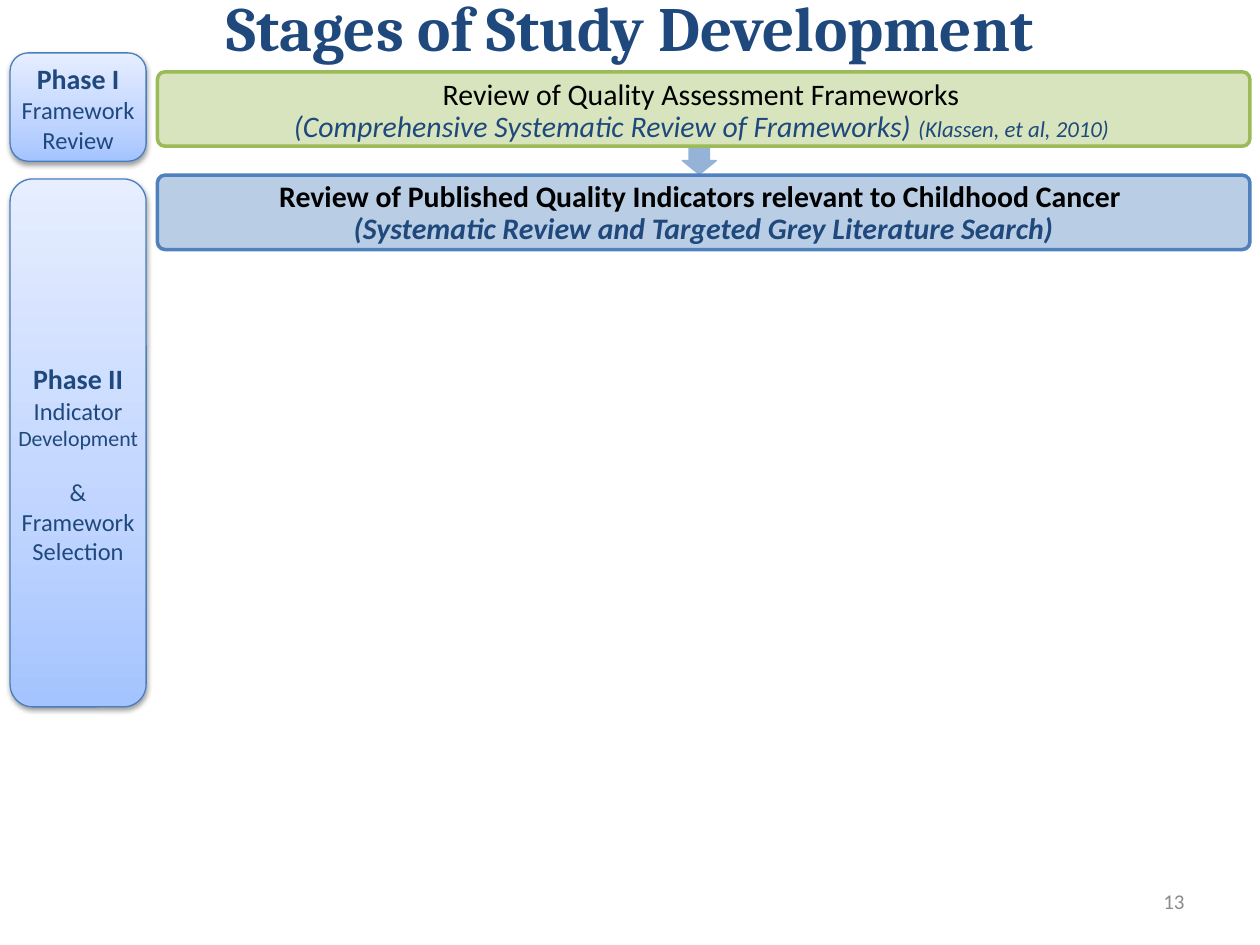
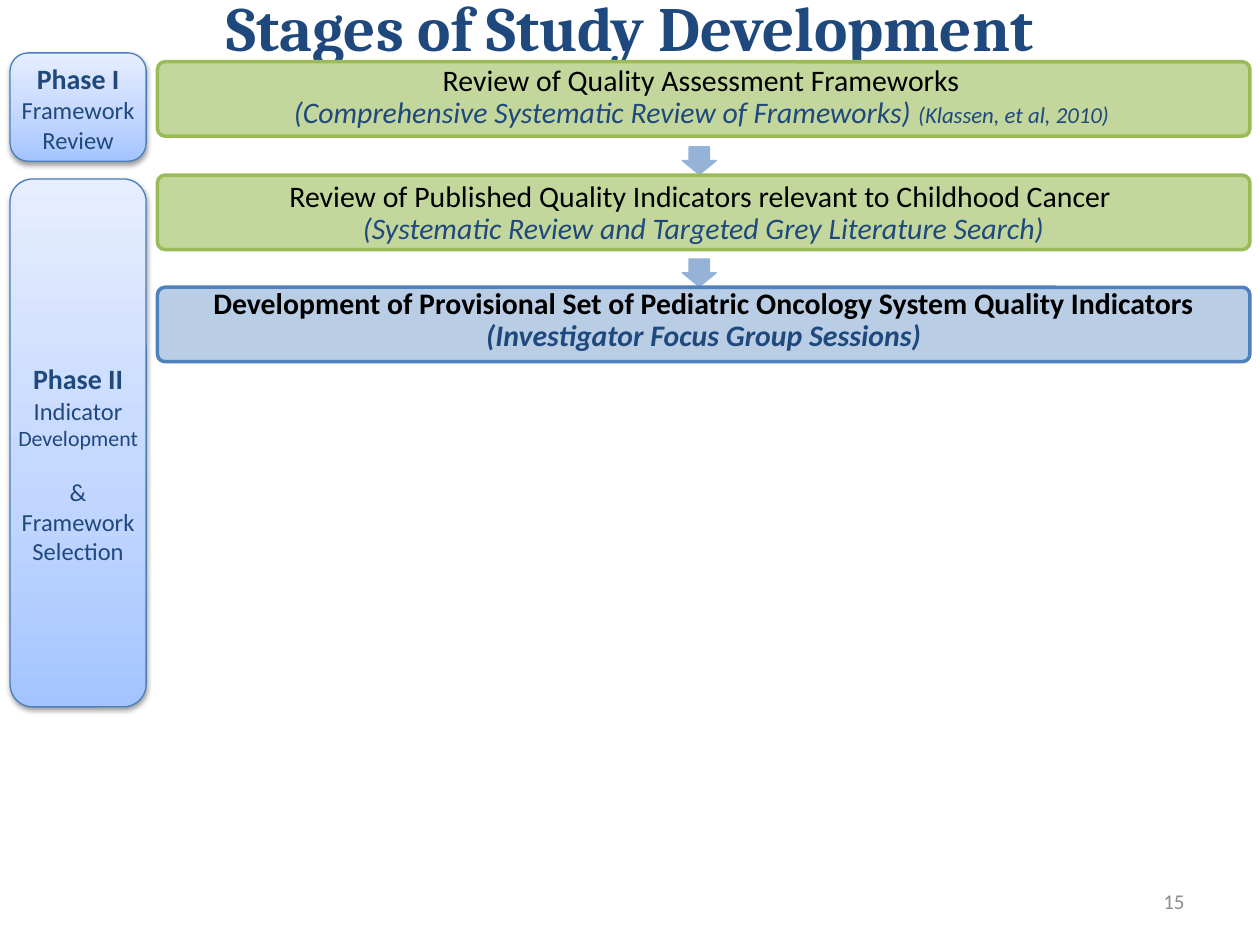
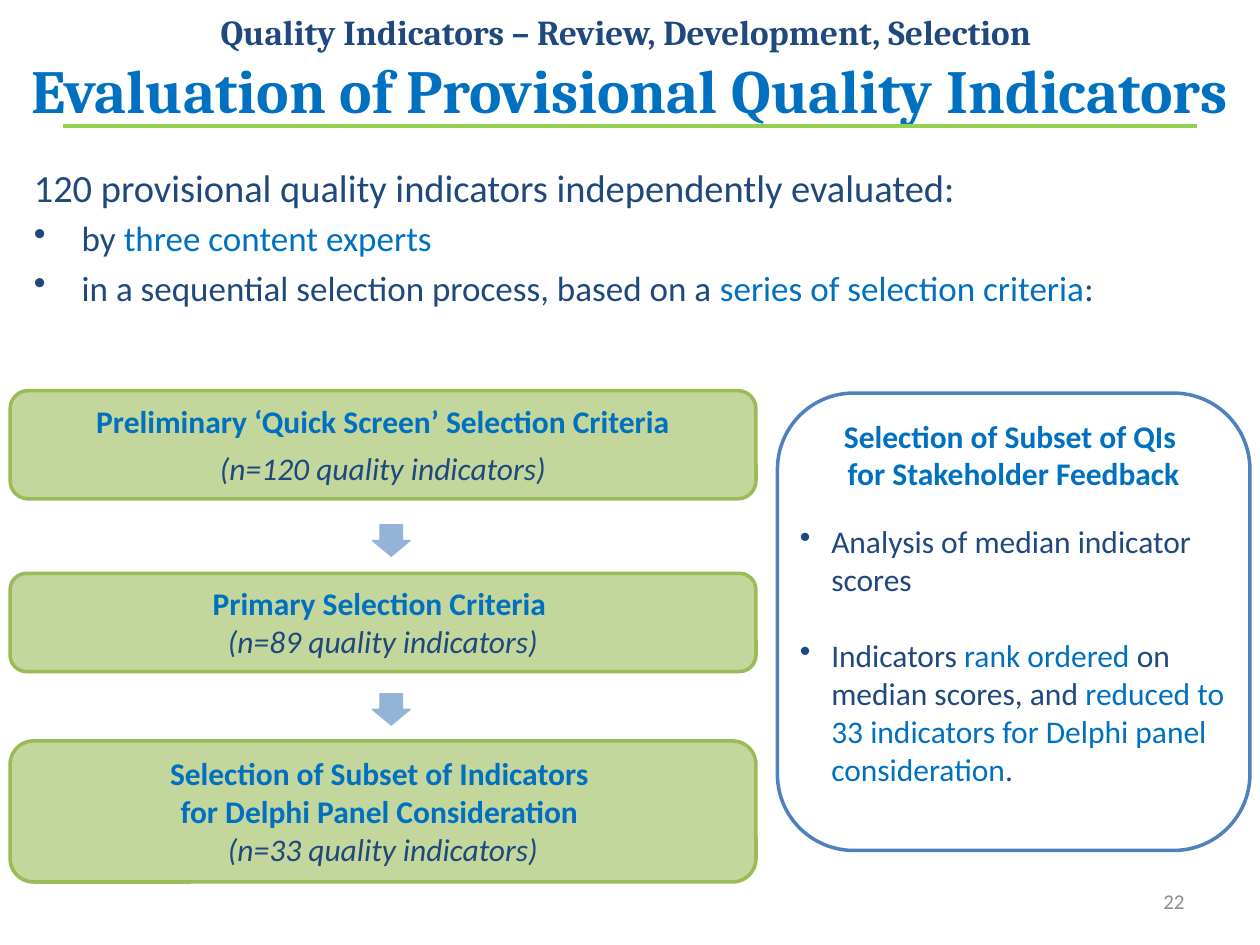
from copy import deepcopy

from pptx import Presentation, oxml
from pptx import util as u
from pptx.dml import color
from pptx.enum import shapes, text
from pptx.oxml import ns

NAVY, BLUE, BLACK, GREY = "1F497D", "0070C0", "000000", "8C8C8C"
GREEN, PALE_GREEN, GREEN_LINE = "C3D69B", "D7E4BD", "9BBB59"
PALE_BLUE, BLUE_LINE, ARROW, RULE = "B9CDE5", "4F81BD", "95B3D7", "92D050"
PHASE_LINE = "4B7EBC"
PHASE_STOPS = [(0, "A4C4FF"), (35, "BFD4FF"), (100, "E6EEFF")]

SHAPE = shapes.MSO_SHAPE
CENTER, LEFT, RIGHT = text.PP_ALIGN.CENTER, text.PP_ALIGN.LEFT, text.PP_ALIGN.RIGHT
TOP, MIDDLE = text.MSO_ANCHOR.TOP, text.MSO_ANCHOR.MIDDLE


def rgb(value):
    return color.RGBColor.from_string(value)


def run(words, size, ink=NAVY, name="Calibri", **fmt):
    return words, ink, {"size": u.Pt(size), "name": name, **fmt}


def para(*runs, bullet=0, align=CENTER, **fmt):
    return runs, bullet, {"alignment": align, **fmt}


class Deck:
    def __init__(self):
        self.prs = Presentation()
        self.prs.slide_width, self.prs.slide_height = u.Inches(10), u.Inches(7.5)
        self.s = None

    def slide(self):
        self.s = self.prs.slides.add_slide(self.prs.slide_layouts[6])

    # Text
    def fill_text(self, tf, paras, inset=(0.1, 0.05, 0.1, 0.05), anchor=TOP):
        sides = ("margin_left", "margin_top", "margin_right", "margin_bottom")
        frame = dict(zip(sides, map(u.Inches, inset)))
        for key, value in {**frame, "word_wrap": True, "vertical_anchor": anchor}.items():
            setattr(tf, key, value)
        for i, (runs, bullet, fmt) in enumerate(paras):
            p = tf.add_paragraph() if i else tf.paragraphs[0]
            for key, value in fmt.items():
                setattr(p, key, value)
            if bullet:
                self.bullet(p, bullet)
            for item in runs:
                self.add_run(p, *item)

    def add_run(self, p, words, ink, fmt):
        for i, part in enumerate(words.split("\n")):
            if i:
                p.add_line_break()
                p._p[-1].append(deepcopy(r._r.rPr))
            if part:
                r = p.add_run()
                r.text = part
                for key, value in fmt.items():
                    setattr(r.font, key, value)
                r.font.color.rgb = rgb(ink)

    def bullet(self, p, indent):
        pPr = p._p.get_or_add_pPr()
        pPr.set("marL", str(u.Inches(indent)))
        pPr.set("indent", str(-u.Inches(indent)))
        mark = f'<a:buChar {ns.nsdecls("a")} char="•"/>'
        pPr.append(oxml.parse_xml(mark))

    def label(self, at, paras, **fmt):
        sp = self.s.shapes.add_textbox(*map(u.Inches, at))
        self.fill_text(sp.text_frame, paras, **fmt)

    def number(self, n):
        self.label((7.17, 6.95, 2.33, 0.4), [para(run(str(n), 12, GREY), align=RIGHT)],
                   anchor=MIDDLE)

    # Shapes
    def shape(self, kind, at, fill, line, width=2, adj=()):
        sp = self.s.shapes.add_shape(kind, *map(u.Inches, at))
        if fill:
            sp.fill.solid()
            sp.fill.fore_color.rgb = rgb(fill)
        sp.line.color.rgb = rgb(line)
        sp.line.width = u.Pt(width)
        sp.shadow.inherit = False
        for i, value in enumerate(adj):
            sp.adjustments[i] = value
        return sp

    def box(self, at, fill, line, paras, inset):
        sp = self.shape(SHAPE.ROUNDED_RECTANGLE, at, fill, line)
        self.fill_text(sp.text_frame, paras, inset)

    def arrow(self, x, y, w, h):
        sp = self.shape(SHAPE.RIGHT_ARROW, (x, y, w, h), ARROW, ARROW, 0.75, (0.6, 0.5))
        sp.rotation = 90

    def rule(self, x1, x2, y):
        ends = map(u.Inches, (x1, y, x2, y))
        sp = self.s.shapes.add_connector(shapes.MSO_CONNECTOR.STRAIGHT, *ends)
        sp.line.color.rgb = rgb(RULE)
        sp.line.width = u.Pt(2.5)
        sp._element.spPr.append(oxml.parse_xml(f'<a:effectLst {ns.nsdecls("a")}/>'))

    # Phase tab: vertical gradient and soft shadow
    def phase(self, kind, y, h, paras, top):
        sp = self.shape(kind, (0.08, y, 1.08, h), None, PHASE_LINE, 0.75)
        stops = "".join(f'<a:gs pos="{pos * 1000}"><a:srgbClr val="{c}"/></a:gs>'
                        for pos, c in PHASE_STOPS)
        sp._element.spPr.insert(2, oxml.parse_xml(
            f'<a:gradFill {ns.nsdecls("a")} rotWithShape="1"><a:gsLst>{stops}</a:gsLst>'
            '<a:lin ang="16200000" scaled="0"/></a:gradFill>'))
        effects = sp._element.spPr.find(ns.qn("a:effectLst"))
        effects.append(oxml.parse_xml(
            f'<a:outerShdw {ns.nsdecls("a")} blurRad="{u.Pt(3.1)}" dist="{u.Pt(1.6)}" '
            'dir="5400000" rotWithShape="0"><a:srgbClr val="000000">'
            '<a:alpha val="38000"/></a:srgbClr></a:outerShdw>'))
        self.fill_text(sp.text_frame, paras, (0, top, 0, 0))

    # Stage bar: heading over an italic method, with an optional citation
    def stage(self, y, text_x, text_y, pad, heading, method, cite="", fill=GREEN, current=False):
        line = BLUE_LINE if current else GREEN_LINE
        self.shape(SHAPE.ROUNDED_RECTANGLE, (1.25, y, 8.67, 0.59),
                   PALE_BLUE if current else fill, line, adj=(0.1,))
        runs = [run(heading + "\n", 17, BLACK, bold=current),
                run(method, 17, bold=current, italic=True),
                run(cite, 13, italic=True)]
        self.label((text_x, text_y, 8.63, 0.56), [para(*runs, line_spacing=0.9)],
                   inset=(pad, 0.07, pad, 0.07), anchor=MIDDLE)

    # Title and phase tabs shared by the stage slides
    def stages_slide(self):
        self.slide()
        title = run("Stages of Study Development", 36, name="Cambria", bold=True)
        self.label((0, 0, 10, 0.42), [para(title)], anchor=MIDDLE)
        self.phase(SHAPE.FLOWCHART_ALTERNATE_PROCESS, 0.42, 0.86, [
            para(run("Phase I ", 16, bold=True), run("Framework Review", 14))], 0.03)
        self.phase(SHAPE.ROUNDED_RECTANGLE, 1.42, 4.19, [
            para(run("Phase II ", 16, bold=True), run("Indicator ", 14),
                 run("Development", 12.5)),
            para(run("& Framework Selection", 14), space_before=u.Pt(15))], 1.4)


FRAMEWORKS = ("Review of Quality Assessment Frameworks",
              "(Comprehensive Systematic Review of Frameworks) ", "(Klassen, et al, 2010)")
PUBLISHED = ("Review of Published Quality Indicators relevant to Childhood Cancer ",
             "(Systematic Review and Targeted Grey Literature Search)")
PROVISIONAL = ("Development of Provisional Set of Pediatric Oncology System Quality Indicators",
               "(Investigator Focus Group Sessions)")


def stage_slides(d):
    # Published indicators are the current stage
    d.stages_slide()
    d.arrow(5.44, 1.14, 0.22, 0.27)
    d.stage(1.39, 1.27, 1.42, 0.07, *PUBLISHED, current=True)
    d.stage(0.57, 1.25, 0.61, 0, *FRAMEWORKS, fill=PALE_GREEN)
    d.number(13)

    # The provisional set is the current stage
    d.stages_slide()
    d.arrow(5.44, 1.14, 0.22, 0.27)
    d.stage(1.39, 1.27, 1.42, 0.07, *PUBLISHED)
    d.arrow(5.44, 2.03, 0.22, 0.27)
    d.stage(2.28, 1.27, 2.27, 0.03, *PROVISIONAL, current=True)
    d.stage(0.49, 1.25, 0.5, 0, *FRAMEWORKS)
    d.number(15)


def evaluation_slide(d):
    d.slide()

    # Stakeholder panel
    item = {"bullet": 0.25, "align": LEFT}
    d.box((6.17, 3.12, 3.75, 3.63), "FFFFFF", BLUE_LINE, [
        para(run("Selection of Subset of QIs \nfor Stakeholder Feedback", 18, BLUE, bold=True),
             space_after=u.Pt(17)),
        para(run("Analysis of median indicator scores", 18), **item),
        para(run("Indicators ", 18), run("rank ordered ", 18, BLUE),
             run("on median scores, and ", 18),
             run("reduced to 33 indicators for Delphi panel consideration", 18, BLUE),
             run(".", 18), space_before=u.Pt(22), **item)], (0, 0.01, 0, 0.01))

    # Introduction
    item = {"align": LEFT, "space_before": u.Pt(2), "space_after": u.Pt(2)}
    d.label((0.17, 1.25, 9.25, 1.75), [
        para(run("120 provisional quality indicators independently evaluated:", 22), **item),
        para(run("by ", 20), run("three content experts", 20, BLUE), bullet=0.38, **item),
        para(run("in a sequential selection process, based on a ", 20),
             run("series of selection criteria", 20, BLUE), run(":", 20),
             bullet=0.38, **item)])

    # Selection steps: top, height, heading, count, gap before the count
    steps = [
        (3.1, 0.86, "Preliminary ‘Quick Screen’ Selection Criteria", 120, 5),
        (4.55, 0.78, "Primary Selection Criteria ", 89, 0),
        (5.88, 1.12, "Selection of Subset of Indicators \nfor Delphi Panel Consideration ", 33, 0),
    ]
    for y, h, heading, count, gap in steps:
        d.box((0.08, y, 5.92, h), GREEN, GREEN_LINE, [
            para(run(heading, 18, BLUE, bold=True)),
            para(run(f"(n={count} quality indicators)", 18, italic=True),
                 space_before=u.Pt(gap))], (0.01, 0.05, 0.01, 0.05))
    for y in (4.14, 5.48):
        d.arrow(2.98, y, 0.25, 0.3)

    # Heading
    d.label((0, 0, 10, 1.08), [para(
        run("Quality Indicators – Review, Development, Selection \n", 20,
            name="Cambria", bold=True),
        run("Evaluation of Provisional Quality Indicators", 35, BLUE,
            name="Cambria", bold=True))], anchor=MIDDLE)
    d.rule(0.5, 9.5, 1)
    d.number(22)


def main():
    d = Deck()
    stage_slides(d)
    evaluation_slide(d)
    d.prs.save("out.pptx")


if __name__ == "__main__":
    main()
